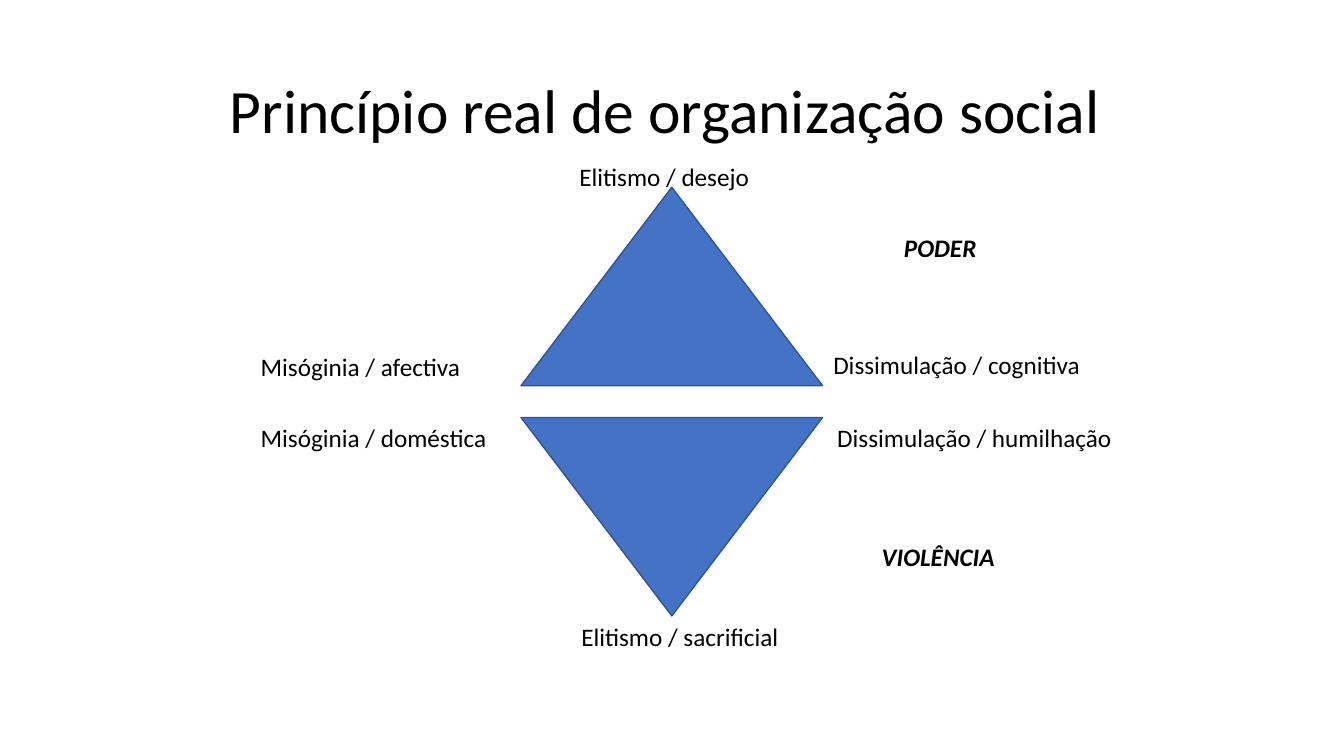
from pptx import Presentation
from pptx import util as u
from pptx.dml import color
from pptx.enum import shapes, text

TITLE = {"size": u.Pt(44)}
LABEL = {"size": u.Pt(18)}
STRONG = {**LABEL, "bold": True, "italic": True}

TRIANGLES = [(4.72, 0), (10.52, 180)]
LABELS = [
    ("Misóginia / afectiva", 6.32, 8.74, 5.61, LABEL),
    ("Dissimulação / cognitiva", 20.75, 8.69, 6.81, LABEL),
    ("Elitismo / desejo", 14.35, 3.94, 4.85, LABEL),
    ("Elitismo / sacrificial", 14.4, 15.52, 5.54, LABEL),
    ("Misóginia / doméstica", 6.32, 10.52, 6.27, LABEL),
    ("Dissimulação / humilhação", 20.85, 10.52, 7.49, LABEL),
    ("PODER", 22.53, 5.72, 2.36, STRONG),
    ("VIOLÊNCIA", 21.97, 13.51, 3.38, STRONG),
]


def rgb(value):
    """Return the colour for a hex string."""
    return color.RGBColor.from_string(value)


def set_all(obj, values):
    """Set each attribute of obj from a dict."""
    for name, value in values.items():
        setattr(obj, name, value)


def add_text(s, words, box, font, frame, para):
    """Add a text box with one formatted run."""
    tf = s.shapes.add_textbox(*map(u.Cm, box)).text_frame
    set_all(tf, frame)
    p = tf.paragraphs[0]
    set_all(p, para)
    r = p.add_run()
    r.text = words
    set_all(r.font, {"name": "Calibri", **font})
    r.font.color.rgb = rgb("000000")


def add_title(s, words):
    """Add the centred slide title."""
    frame = {"word_wrap": True, "vertical_anchor": text.MSO_ANCHOR.MIDDLE}
    para = {"alignment": text.PP_ALIGN.CENTER, "line_spacing": 0.9}
    add_text(s, words, (2.34, 1.02, 29.21, 3.68), TITLE, frame, para)


def add_label(s, words, left, top, width, font):
    """Add a one-line label that fits its text."""
    frame = {"word_wrap": False, "auto_size": text.MSO_AUTO_SIZE.SHAPE_TO_FIT_TEXT}
    add_text(s, words, (left, top, width, 1.02), font, frame, {})


def add_triangle(s, top, rotation):
    """Add a blue triangle, pointing up unless rotated."""
    box = map(u.Cm, (13.13, top, 7.6, 5))
    sp = s.shapes.add_shape(shapes.MSO_SHAPE.ISOSCELES_TRIANGLE, *box)
    sp.rotation = rotation
    sp.shadow.inherit = False
    sp.fill.solid()
    sp.fill.fore_color.rgb = rgb("4472C4")
    sp.line.color.rgb = rgb("325491")
    sp.line.width = u.Pt(1)


def main():
    """Build and save the slide."""
    prs = Presentation()
    set_all(prs, {"slide_width": u.Cm(33.87), "slide_height": u.Cm(19.05)})
    s = prs.slides.add_slide(prs.slide_layouts[6])
    add_title(s, "Princípio real de organização social ")
    for triangle in TRIANGLES:
        add_triangle(s, *triangle)
    for label in LABELS:
        add_label(s, *label)
    prs.save("out.pptx")


if __name__ == "__main__":
    main()
